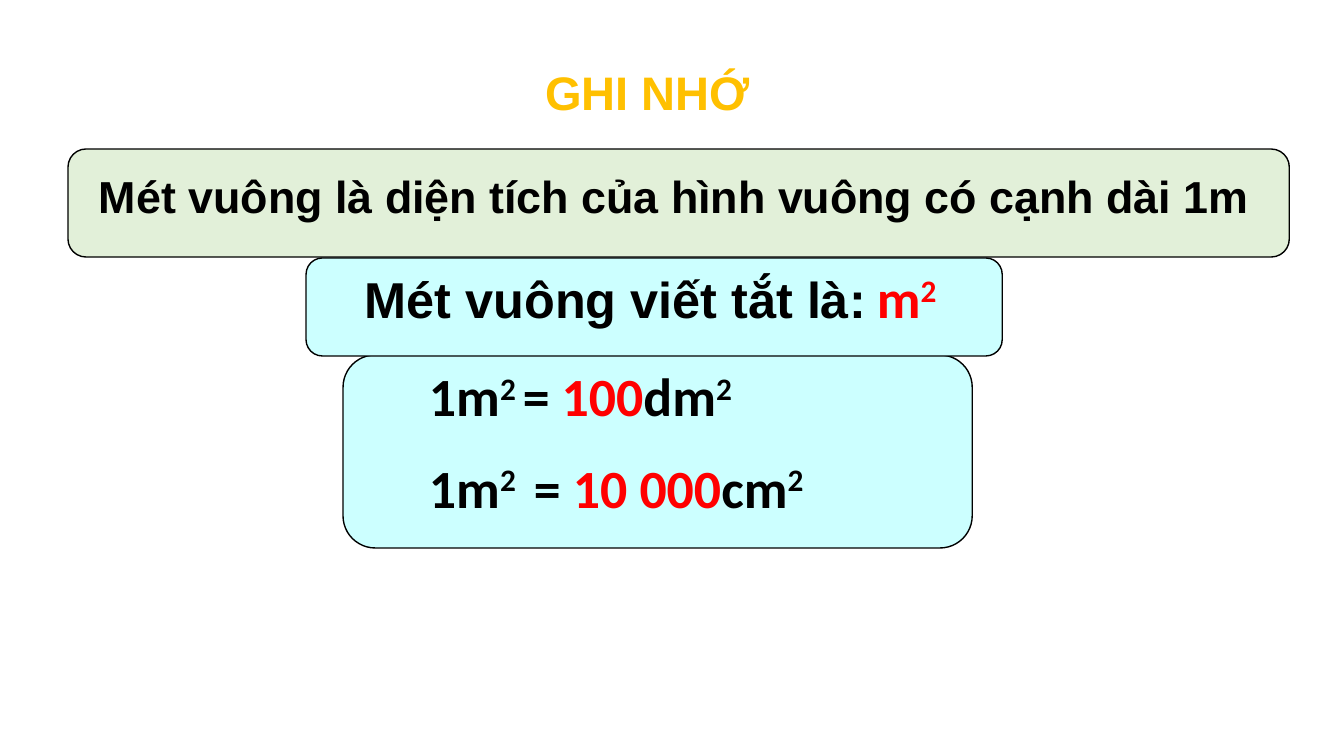
"""Build the summary slide about the square metre."""
import pptx
import pptx.dml.color
import pptx.enum.shapes
import pptx.enum.text
import pptx.util

PX = 914400 / 100.8
COLORS = {"black": "000000", "red": "FF0000", "gold": "FFC000",
          "green": "E2F0D9", "cyan": "CCFFFF"}
SUPERSCRIPT = "30000"

TITLE = ("GHI NHỚ", 33.6, "Arial", "gold", False)
TITLE_BOX = (535, 58, 308, 68)

# Runs: text, size in points, font, colour, superscript
CARDS = [
    {"card": (343, 355, 629, 193), "fill": "cyan", "text_box": (419, 358, 581, 332),
     "lines": [
         [("1m", 38.4, "Calibri", "black", False),
          ("2 ", 38.4, "Calibri", "black", True),
          ("= ", 38.4, "Calibri", "black", False),
          ("100", 38.4, "Calibri", "red", False),
          ("dm", 38.4, "Calibri", "black", False),
          ("2", 38.4, "Calibri", "black", True)],
         [("1m", 38.4, "Calibri", "black", False),
          ("2", 38.4, "Calibri", "black", True),
          (" ", 57.6, "Calibri", "black", False),
          ("= ", 38.4, "Calibri", "black", False),
          ("10 000", 38.4, "Calibri", "red", False),
          ("cm", 38.4, "Calibri", "black", False),
          ("2", 38.4, "Calibri", "black", True)]]},
    {"card": (68, 149, 1221, 108), "fill": "green", "text_box": (89, 164, 1238, 65),
     "lines": [
         [("Mét vuông là diện tích của hình vuông có cạnh dài 1m",
           32, "Arial", "black", False)]]},
    {"card": (306, 258, 696, 98), "fill": "cyan", "text_box": (355, 260, 708, 136),
     "lines": [
         [("Mét vuông viết tắt là:", 36, "Arial", "black", False),
          (" ", 33.6, "Calibri", "black", False),
          ("m", 38.4, "Calibri", "red", False),
          ("2", 38.4, "Calibri", "red", True)]]},
]


def emu(box):
    return [round(value * PX) for value in box]


def color(name):
    return pptx.dml.color.RGBColor.from_string(COLORS[name])


def format_run(run, size, font, color_name, superscript):
    run.font.size = pptx.util.Pt(size)
    run.font.name = font
    run.font.bold = True
    run.font.color.rgb = color(color_name)
    if superscript:
        run._r.get_or_add_rPr().set("baseline", SUPERSCRIPT)


def prepare_frame(text_frame):
    text_frame.word_wrap = True
    text_frame.auto_size = pptx.enum.text.MSO_AUTO_SIZE.NONE
    text_frame.vertical_anchor = pptx.enum.text.MSO_ANCHOR.TOP


def add_title(slide):
    title = slide.shapes.title
    title.left, title.top, title.width, title.height = emu(TITLE_BOX)
    prepare_frame(title.text_frame)
    title.text_frame.text = TITLE[0]
    paragraph = title.text_frame.paragraphs[0]
    paragraph.alignment = pptx.enum.text.PP_ALIGN.LEFT
    paragraph.line_spacing = 1.0
    format_run(paragraph.runs[0], *TITLE[1:])


def add_card(slide, card):
    shape = slide.shapes.add_shape(
        pptx.enum.shapes.MSO_SHAPE.ROUNDED_RECTANGLE, *emu(card["card"]))
    shape.shadow.inherit = False
    shape.fill.solid()
    shape.fill.fore_color.rgb = color(card["fill"])
    shape.line.color.rgb = color("black")
    shape.line.width = pptx.util.Pt(1)

    text_frame = slide.shapes.add_textbox(*emu(card["text_box"])).text_frame
    prepare_frame(text_frame)
    for index, line in enumerate(card["lines"]):
        paragraph = text_frame.add_paragraph() if index else text_frame.paragraphs[0]
        for text, *style in line:
            run = paragraph.add_run()
            run.text = text
            format_run(run, *style)


def main():
    presentation = pptx.Presentation()
    presentation.slide_width = pptx.util.Inches(13.33)
    presentation.slide_height = pptx.util.Inches(7.5)
    slide = presentation.slides.add_slide(presentation.slide_layouts[5])
    add_title(slide)
    for card in CARDS:
        add_card(slide, card)
    presentation.save("out.pptx")


if __name__ == "__main__":
    main()
